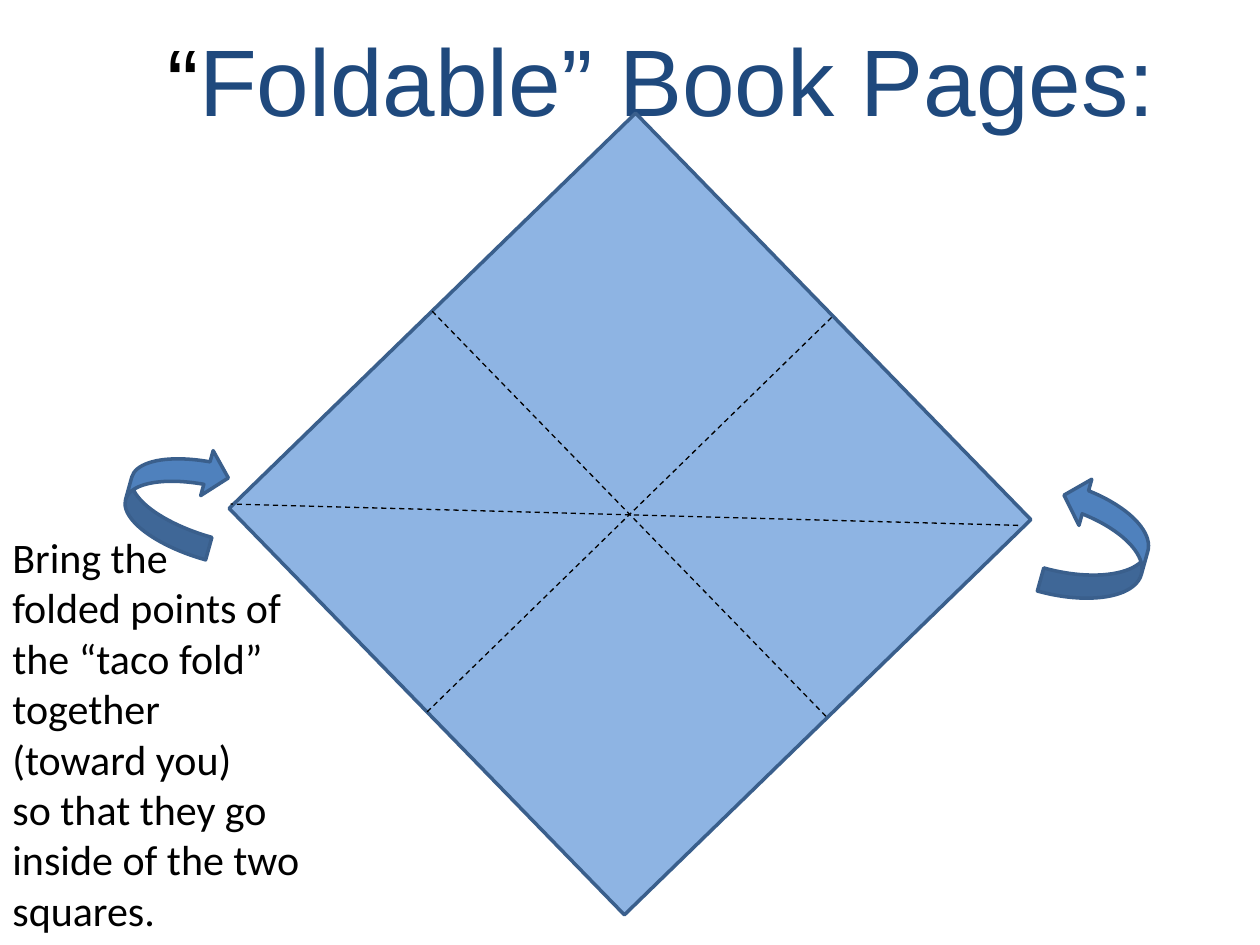
from lxml import etree
from pptx import Presentation
from pptx.dml.color import RGBColor
from pptx.enum.dml import MSO_LINE
from pptx.enum.shapes import MSO_CONNECTOR, MSO_SHAPE
from pptx.enum.text import MSO_ANCHOR, MSO_AUTO_SIZE, PP_ALIGN
from pptx.oxml.ns import qn
from pptx.util import Inches, Pt

DASH = MSO_LINE.DASH
STRAIGHT = MSO_CONNECTOR.STRAIGHT
RECTANGLE = MSO_SHAPE.RECTANGLE
CURVED_ARROW = MSO_SHAPE.CURVED_RIGHT_ARROW
MIDDLE = MSO_ANCHOR.MIDDLE
GROW = MSO_AUTO_SIZE.SHAPE_TO_FIT_TEXT
CENTER = PP_ALIGN.CENTER

THEME = {
    "black": RGBColor.from_string("000000"),
    "title": RGBColor.from_string("1F497D"),
    "paper": RGBColor.from_string("8EB4E3"),
    "arrow": RGBColor.from_string("4F81BD"),
    "outline": RGBColor.from_string("3A5F8C"),
    "title_font": "Arial",
    "body_font": "Calibri",
    "title_size": Pt(54),
    "body_size": Pt(24),
    "outline_width": Pt(2),
    "fold_width": Pt(0.75),
}


def format_run(run, font, size, color):
    run.font.name = THEME[font]
    run.font.size = THEME[size]
    run.font.color.rgb = THEME[color]


def add_rotated_shape(kind, box, rotation, fill):
    shape = slide.shapes.add_shape(kind, *map(Inches, box))
    shape.rotation = rotation
    shape.shadow.inherit = False
    shape.fill.solid()
    shape.fill.fore_color.rgb = THEME[fill]
    shape.line.color.rgb = THEME["outline"]
    shape.line.width = THEME["outline_width"]
    return shape


presentation = Presentation()
presentation.slide_width = Inches(10)
presentation.slide_height = Inches(7.5)
slide = presentation.slides.add_slide(presentation.slide_layouts[5])

# Title: black opening quote, blue wording
title = slide.shapes.title
title.left, title.top, title.width, title.height = map(Inches, (0.75, 0, 9, 1.25))
title.text_frame.vertical_anchor = MIDDLE
paragraph = title.text_frame.paragraphs[0]
paragraph.alignment = CENTER
for text, color in (("“", "black"), ("Foldable” Book Pages:", "title")):
    run = paragraph.add_run()
    run.text = text
    format_run(run, "title_font", "title_size", color)

# Square sheet standing on its corner
add_rotated_shape(RECTANGLE, (2.75, 1.83, 4.5, 4.5), 45.8, "paper")

# Dashed fold lines
folds = ((3.43, 2.47, 6.57, 5.7), (3.39, 5.65, 6.61, 2.51), (8.08, 4.17, 1.83, 4))
for ends in folds:
    fold = slide.shapes.add_connector(STRAIGHT, *map(Inches, ends))
    fold.line.color.rgb = THEME["black"]
    fold.line.width = THEME["fold_width"]
    fold.line.dash_style = DASH
    etree.SubElement(fold._element.spPr, qn("a:effectLst"))

# Instructions
instructions = slide.shapes.add_textbox(*map(Inches, (0, 4.17, 2.5, 3.33)))
text_frame = instructions.text_frame
text_frame.word_wrap = True
text_frame.auto_size = GROW
text_frame.text = "\n".join((
    "Bring the",
    "folded points of the “taco fold” together (toward you)",
    "so that they go inside of the two squares.",
))
for paragraph in text_frame.paragraphs:
    format_run(paragraph.runs[0], "body_font", "body_size", "black")

# Curved arrows at the side points, the left one mirrored
for box, mirrored in (((8.35, 3.83, 0.76, 0.98), False), ((1.02, 3.5, 0.74, 0.86), True)):
    arrow = add_rotated_shape(CURVED_ARROW, box, 195.5, "arrow")
    for index, value in enumerate((0.25, 0.5, 0.235)):
        arrow.adjustments[index] = value
    if mirrored:
        arrow._element.spPr.xfrm.set("flipH", "1")

presentation.save("out.pptx")
